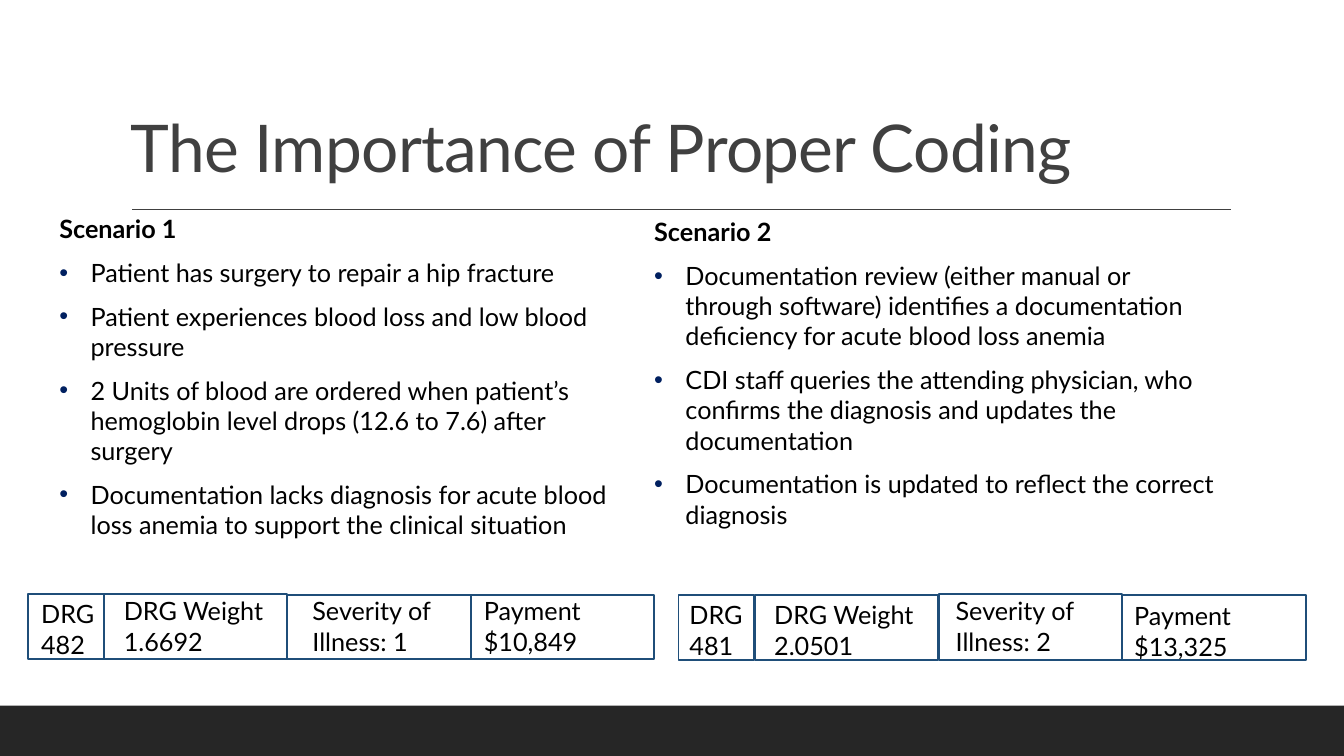
from lxml.etree import SubElement
from pptx import Presentation
from pptx.dml.color import RGBColor
from pptx.enum.shapes import MSO_CONNECTOR, MSO_SHAPE
from pptx.enum.text import MSO_ANCHOR
from pptx.oxml.ns import qn
from pptx.util import Inches, Pt

BLACK = RGBColor(0x00, 0x00, 0x00)
GRAY = RGBColor(0x40, 0x40, 0x40)
FOOTER = RGBColor(0x26, 0x26, 0x26)
BORDER = RGBColor(0x1F, 0x4E, 0x79)
BULLET = RGBColor(0x00, 0x20, 0x60)

prs = Presentation()
prs.slide_width, prs.slide_height = Inches(13.33), Inches(7.5)
s = prs.slides.add_slide(prs.slide_layouts[6])


def add_text(box, lines, size=18, color=BLACK, anchor=MSO_ANCHOR.TOP,
             line_spacing=None, tracking=None, outline=False):
    """Add a text box; with outline, a bold heading followed by bullets."""
    tf = s.shapes.add_textbox(*[Inches(v) for v in box]).text_frame
    tf.word_wrap = True
    tf.vertical_anchor = anchor
    for i, line in enumerate(lines):
        p = tf.paragraphs[0] if i == 0 else tf.add_paragraph()
        if line_spacing:
            p.line_spacing = line_spacing
        if outline:
            p.space_after = Pt(6)
        if outline and i > 0:
            p.space_before = Pt(3.6)
            pPr = p._p.get_or_add_pPr()
            pPr.set("marL", str(Inches(0.31)))
            pPr.set("indent", str(-Inches(0.31)))
            clr = SubElement(pPr, qn("a:buClr"))
            SubElement(clr, qn("a:srgbClr")).set("val", str(BULLET))
            SubElement(pPr, qn("a:buFont")).set("typeface", "Arial")
            SubElement(pPr, qn("a:buChar")).set("char", "•")
        r = p.add_run()
        r.text = line
        r.font.name = "Lato"
        r.font.size = Pt(size)
        r.font.color.rgb = color
        r.font.bold = outline and i == 0
        if tracking:
            r._r.get_or_add_rPr().set("spc", str(tracking))


def add_rect(box, fill=None, line=None):
    sp = s.shapes.add_shape(MSO_SHAPE.RECTANGLE, *[Inches(v) for v in box])
    sp.shadow.inherit = False
    if fill is None:
        sp.fill.background()
    else:
        sp.fill.solid()
        sp.fill.fore_color.rgb = fill
    if line is None:
        sp.line.fill.background()
    else:
        sp.line.color.rgb = line
        sp.line.width = Pt(1.25)


# Frame and title
add_rect((0, 7, 13.33, 0.5), fill=FOOTER)
rule = s.shapes.add_connector(MSO_CONNECTOR.STRAIGHT, Inches(1.31), Inches(2.08),
                              Inches(12.21), Inches(2.08))
rule.line.color.rgb = GRAY
rule.line.width = Pt(1)
SubElement(rule._element.spPr, qn("a:effectLst"))
add_text((1.2, 0.31, 11, 1.59), ["The Importance of Proper Coding"], size=47, color=GRAY,
         anchor=MSO_ANCHOR.BOTTOM, line_spacing=0.9, tracking=-50)

# Scenarios
add_text((0.49, 2.07, 5.78, 4.25), [
    "Scenario 1",
    "Patient has surgery to repair a hip fracture",
    "Patient experiences blood loss and low blood pressure",
    "2 Units of blood are ordered when patient’s hemoglobin level drops (12.6 to 7.6) after surgery",
    "Documentation lacks diagnosis for acute blood loss anemia to support the clinical situation",
], outline=True)
add_text((6.39, 2.1, 5.78, 3.23), [
    "Scenario 2",
    "Documentation review (either manual or through software) identifies a documentation "
    "deficiency for acute blood loss anemia",
    "CDI staff queries the attending physician, who confirms the diagnosis and updates the documentation",
    "Documentation is updated to reflect the correct diagnosis",
], outline=True)

# Outcome strips: cell left, top, width, height; text left, top, width; lines
outcomes = [
    ((0.28, 5.89, 0.75, 0.65), (0.31, 5.89, 0.74), ["DRG", "482"]),
    ((1.03, 5.89, 1.82, 0.65), (1.13, 5.86, 1.63), ["DRG Weight", "1.6692"]),
    ((2.85, 5.9, 1.82, 0.64), (3, 5.86, 1.58), ["Severity of Illness: 1"]),
    ((4.67, 5.9, 1.82, 0.64), (4.7, 5.86, 1.58), ["Payment", "$10,849"]),
    ((6.73, 5.9, 0.75, 0.65), (6.74, 5.9, 0.74), ["DRG", "481"]),
    ((7.49, 5.9, 1.81, 0.65), (7.58, 5.9, 1.63), ["DRG Weight", "2.0501"]),
    ((9.31, 5.89, 1.82, 0.66), (9.38, 5.86, 1.58), ["Severity of Illness: 2"]),
    ((11.13, 5.9, 1.82, 0.65), (11.15, 5.91, 1.58), ["Payment", "$13,325"]),
]
for cell, text_at, lines in outcomes:
    add_rect(cell, line=BORDER)
    add_text((*text_at, 0.71), lines)

prs.save("out.pptx")
